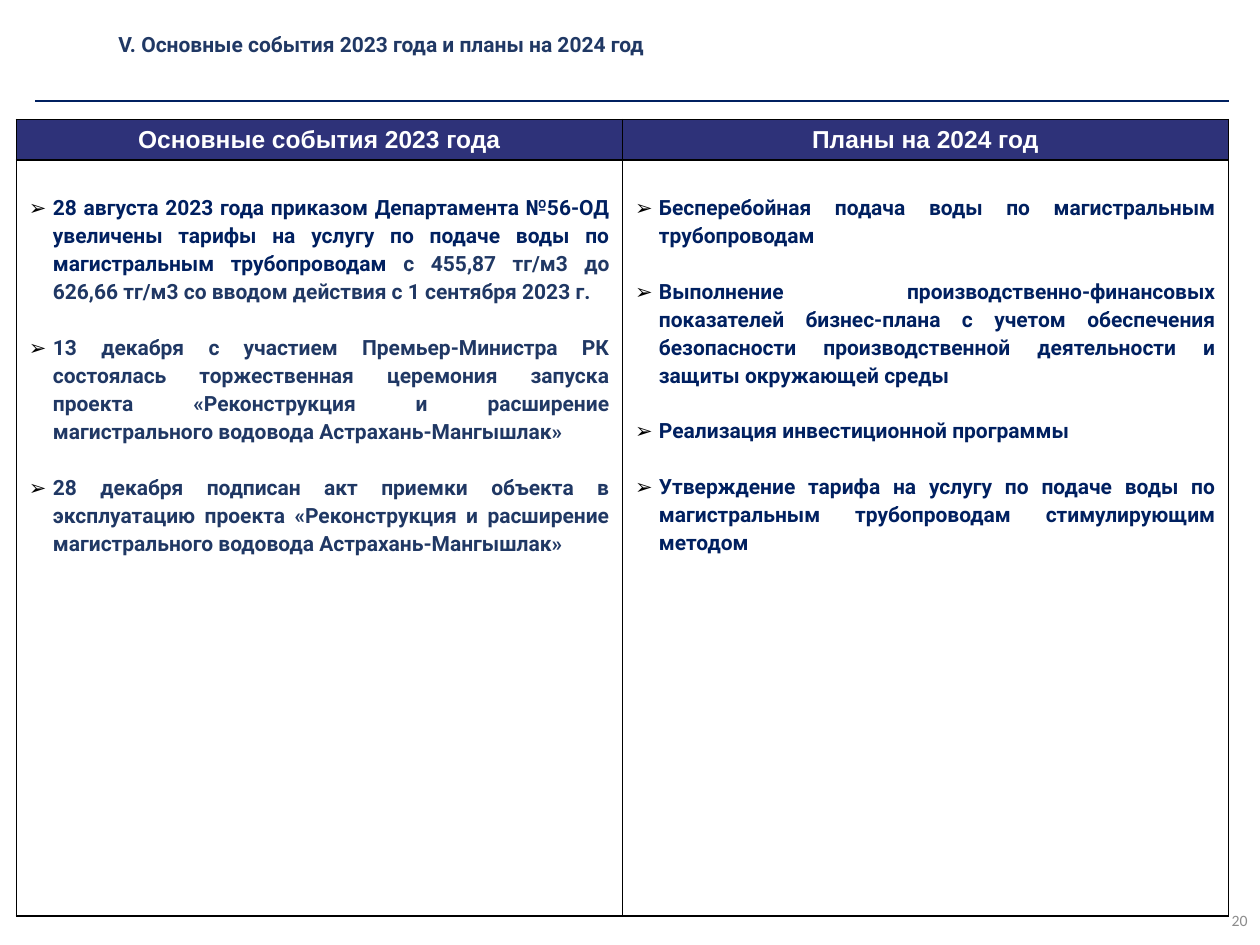
from dataclasses import dataclass

from lxml import etree
from pptx import Presentation
from pptx.dml.color import RGBColor
from pptx.enum.shapes import MSO_CONNECTOR
from pptx.enum.text import MSO_ANCHOR, MSO_AUTO_SIZE, PP_ALIGN
from pptx.oxml.ns import qn
from pptx.util import Inches, Pt

STRAIGHT = MSO_CONNECTOR.STRAIGHT
MIDDLE, TOP = MSO_ANCHOR.MIDDLE, MSO_ANCHOR.TOP
CENTER, RIGHT, JUSTIFY = PP_ALIGN.CENTER, PP_ALIGN.RIGHT, PP_ALIGN.JUSTIFY
NO_AUTOFIT = MSO_AUTO_SIZE.NONE

# The slide is a grid of 100 columns by 75 rows of square units
COLUMNS, ROWS = 100, 75
NAVY, SLATE, BLACK = "002060", "203864", "000000"

TITLE_FONT = {"name": "Roboto", "size": Pt(12), "bold": True, "color": SLATE}
HEADER_FONT = {"name": "Arial", "size": Pt(14), "bold": True, "color": "FFFFFF"}
NUMBER_FONT = {"name": "Calibri", "size": Pt(9), "bold": False, "color": "8C8C8C"}
BODY_FONT = {"name": "Roboto", "size": Pt(12), "bold": True}


@dataclass
class Part:
    text: str
    color: str


@dataclass
class Column:
    header: str
    items: list[list[Part]]
    gap: float  # points between items


EVENTS = Column("Основные события 2023 года", [
    [Part("28 августа 2023 года приказом Департамента №56-ОД увеличены тарифы на услугу "
          "по подаче воды по магистральным трубопроводам ", NAVY),
     Part("с 455,87 тг/м3 до 626,66 тг/м3 со вводом действия с 1 сентября 2023 г.", SLATE)],
    [Part("13 декабря с участием Премьер-Министра РК состоялась торжественная церемония "
          "запуска проекта «Реконструкция и расширение магистрального водовода "
          "Астрахань-Мангышлак»", SLATE)],
    [Part("28 декабря подписан акт приемки объекта в эксплуатацию проекта «Реконструкция "
          "и расширение магистрального водовода Астрахань-Мангышлак»", SLATE)],
], 16)
PLANS = Column("Планы на 2024 год", [
    [Part("Бесперебойная подача воды по магистральным трубопроводам", NAVY)],
    [Part("Выполнение производственно-финансовых показателей бизнес-плана с учетом "
          "обеспечения безопасности производственной деятельности и защиты окружающей "
          "среды", NAVY)],
    [Part("Реализация инвестиционной программы", NAVY)],
    [Part("Утверждение тарифа на услугу по подаче воды по магистральным трубопроводам "
          "стимулирующим методом", NAVY)],
], 15.7)


def units(count: float) -> int:
    return Inches(count / 10)


def rgb(color: str) -> RGBColor:
    return RGBColor.from_string(color)


def format_font(font, values: dict) -> None:
    for name, value in values.items():
        if name == "color":
            font.color.rgb = rgb(value)
        else:
            setattr(font, name, value)


def write_line(frame, text: str, align, values: dict) -> None:
    para = frame.paragraphs[0]
    para.alignment = align
    span = para.add_run()
    span.text = text
    format_font(span.font, values)


def format_box(frame) -> None:
    for name, value in {"word_wrap": True, "auto_size": NO_AUTOFIT,
                        "vertical_anchor": MIDDLE}.items():
        setattr(frame, name, value)


def add_bullet(para) -> None:
    properties = para._p.get_or_add_pPr()
    indent = Inches(0.19)
    properties.set("marL", str(indent))
    properties.set("indent", str(-indent))
    color = etree.SubElement(properties, qn("a:buClr"))
    etree.SubElement(color, qn("a:srgbClr"), val=BLACK)
    etree.SubElement(properties, qn("a:buFont"), typeface="Arial")
    etree.SubElement(properties, qn("a:buChar"), char="➢")


def add_borders(cell) -> None:
    properties = cell._tc.get_or_add_tcPr()
    for position, side in enumerate(("a:lnL", "a:lnR", "a:lnT", "a:lnB")):
        line = etree.Element(qn(side), w=str(Pt(1)))
        fill = etree.SubElement(line, qn("a:solidFill"))
        etree.SubElement(fill, qn("a:srgbClr"), val=BLACK)
        properties.insert(position, line)


def fill_header(cell, text: str) -> None:
    cell.fill.solid()
    cell.fill.fore_color.rgb = rgb("2E3279")
    cell.vertical_anchor = MIDDLE
    write_line(cell.text_frame, text, CENTER, HEADER_FONT)
    add_borders(cell)


def fill_body(cell, column: Column) -> None:
    cell.fill.background()
    cell.vertical_anchor = TOP
    cell.margin_top = units(2.6)
    frame = cell.text_frame
    for index, item in enumerate(column.items):
        para = frame.add_paragraph() if index else frame.paragraphs[0]
        add_bullet(para)
        para.alignment = JUSTIFY
        para.line_spacing = 1.14
        para.space_before = Pt(column.gap if index else 0)
        for part in item:
            span = para.add_run()
            span.text = part.text
            format_font(span.font, {**BODY_FONT, "color": part.color})
    add_borders(cell)


def add_columns(slide, columns: list[Column]) -> None:
    table = slide.shapes.add_table(2, len(columns), units(1.3), units(9.5),
                                   units(96.2), units(63.2)).table
    table.first_row = table.horz_banding = False
    for row, height in zip(table.rows, (3.2, 60)):
        row.height = units(height)
    for index, column in enumerate(columns):
        fill_header(table.cell(0, index), column.header)
        fill_body(table.cell(1, index), column)


def main() -> None:
    deck = Presentation()
    deck.slide_width, deck.slide_height = units(COLUMNS), units(ROWS)
    page = deck.slides.add_slide(deck.slide_layouts[5])

    # Page number
    number = page.shapes.add_textbox(units(77.5), units(71), units(22.5), units(4))
    format_box(number.text_frame)
    write_line(number.text_frame, "20", RIGHT, NUMBER_FONT)

    # Title
    title = page.shapes.title
    title.left, title.top = units(8.4), units(1.4)
    title.width, title.height = units(89.3), units(4.2)
    format_box(title.text_frame)
    write_line(title.text_frame, "V. Основные события 2023 года и планы на 2024 год",
               JUSTIFY, TITLE_FONT)

    # Rule under the title
    rule = page.shapes.add_connector(STRAIGHT, units(2.8), units(8), units(97.5), units(8))
    rule.line.color.rgb = rgb(NAVY)
    rule.line.width = Pt(1)
    etree.SubElement(rule._element.spPr, qn("a:effectLst"))

    # Events and plans
    add_columns(page, [EVENTS, PLANS])
    deck.save("out.pptx")


if __name__ == "__main__":
    main()
